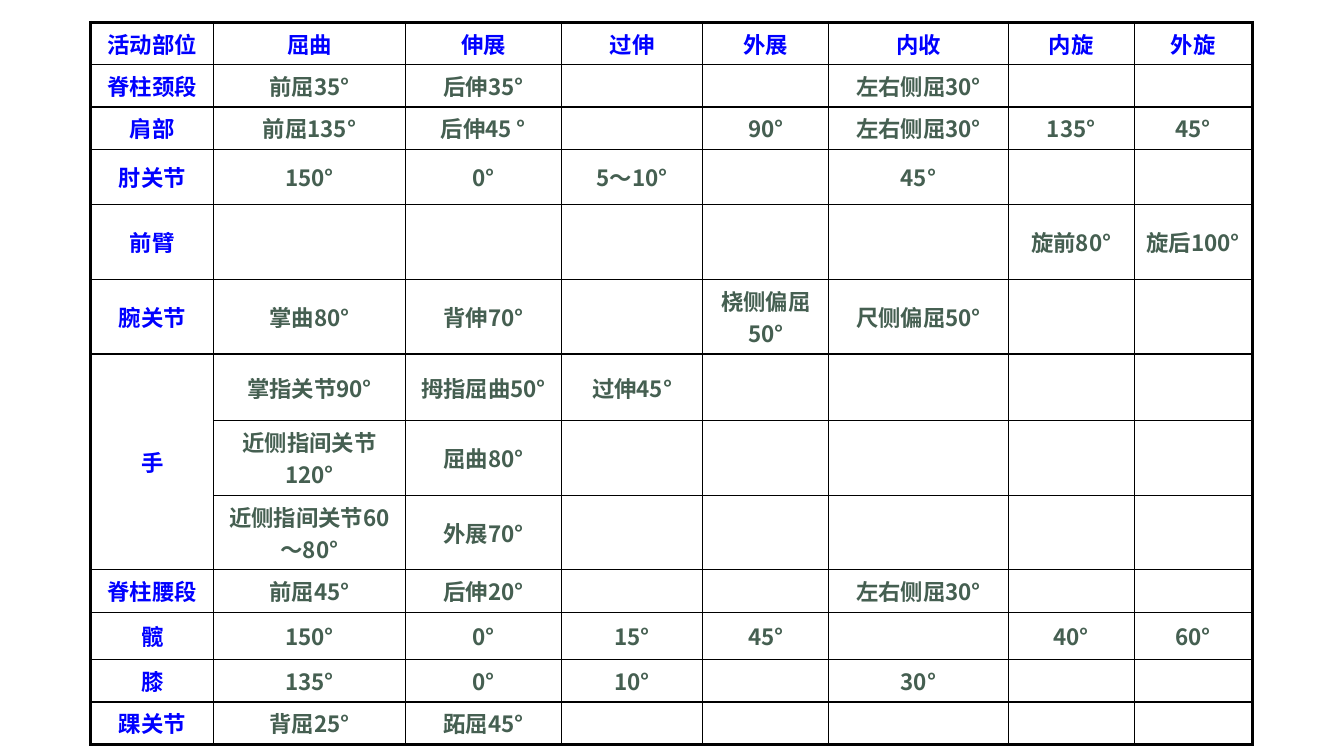
from lxml import etree
from pptx import Presentation
from pptx.dml.color import RGBColor
from pptx.enum import text
from pptx.oxml.ns import qn
from pptx.util import Inches, Pt

BLUE = RGBColor(0x00, 0x00, 0xFF)
GREEN = RGBColor(0x45, 0x5F, 0x51)
BLACK = RGBColor(0x00, 0x00, 0x00)
FONT = "Noto Sans CJK SC"
THIN, THICK = 1, 2.25
BOX = (0.9, 0.22, 11.53, 7.1)
WIDTHS = [1.22, 1.9, 1.55, 1.4, 1.25, 1.78, 1.25, 1.17]
HEIGHTS = [0.42, 0.42, 0.42, 0.55, 0.72, 0.72, 0.66,
           0.72, 0.72, 0.42, 0.47, 0.42, 0.42]
ROWS = [
    ["活动部位", "屈曲", "伸展", "过伸", "外展", "内收", "内旋", "外旋"],
    ["脊柱颈段", "前屈35°", "后伸35°", "", "", "左右侧屈30°", "", ""],
    ["肩部", "前屈135°", "后伸45 °", "", "90°", "左右侧屈30°", "135°", "45°"],
    ["肘关节", "150°", "0°", "5～10°", "", "45°", "", ""],
    ["前臂", "", "", "", "", "", "旋前80°", "旋后100°"],
    ["腕关节", "掌曲80°", "背伸70°", "", "桡侧偏屈50°", "尺侧偏屈50°", "", ""],
    ["手", "掌指关节90°", "拇指屈曲50°", "过伸45°", "", "", "", ""],
    ["", "近侧指间关节120°", "屈曲80°", "", "", "", "", ""],
    ["", "近侧指间关节60～80°", "外展70°", "", "", "", "", ""],
    ["脊柱腰段", "前屈45°", "后伸20°", "", "", "左右侧屈30°", "", ""],
    ["髋", "150°", "0°", "15°", "45°", "", "40°", "60°"],
    ["膝", "135°", "0°", "10°", "", "30°", "", ""],
    ["踝关节", "背屈25°", "跖屈45°", "", "", "", "", ""],
]
HAND, SPAN = 6, 3


def write(cell, words, color):
    """Put centred bold words in a cell."""
    cell.text = words
    para = cell.text_frame.paragraphs[0]
    para.alignment = text.PP_ALIGN.CENTER
    font = para.font
    font.name, font.size, font.bold = FONT, Pt(16), True
    font.color.rgb = color
    props = para._p.pPr.find(qn("a:defRPr"))
    etree.SubElement(props, qn("a:ea"), typeface=FONT)


def border(cell, sides):
    """Draw the four edges of a cell, given widths by side."""
    props = cell._tc.get_or_add_tcPr()
    for i, (side, width) in enumerate(sides.items()):
        line = etree.Element(qn("a:ln" + side), w=str(Pt(width)))
        fill = etree.SubElement(line, qn("a:solidFill"))
        etree.SubElement(fill, qn("a:srgbClr"), val=str(BLACK))
        props.insert(i, line)


def motion(slide, box):
    """Build the table of joint motion ranges in a box."""
    table = slide.shapes.add_table(
        len(ROWS), len(WIDTHS), *map(Inches, box)).table
    table.first_row = table.horz_banding = False
    for col, width in zip(table.columns, WIDTHS):
        col.width = Inches(width)
    for row, height in zip(table.rows, HEIGHTS):
        row.height = Inches(height)
    table.cell(HAND, 0).merge(table.cell(HAND + SPAN - 1, 0))
    end, last = len(ROWS) - 1, len(WIDTHS) - 1
    for r, row in enumerate(ROWS):
        for c, words in enumerate(row):
            cell = table.cell(r, c)
            cell.vertical_anchor = text.MSO_ANCHOR.MIDDLE
            cell.fill.background()
            outer = {"L": c == 0, "R": c == last, "T": r == 0, "B": r == end}
            border(cell, {s: THICK if o else THIN for s, o in outer.items()})
            if words:
                write(cell, words, BLUE if r == 0 or c == 0 else GREEN)


def main():
    """Make the deck and save it."""
    deck = Presentation()
    deck.slide_width, deck.slide_height = Inches(13.33), Inches(7.5)
    motion(deck.slides.add_slide(deck.slide_layouts[6]), BOX)
    deck.save("out.pptx")


if __name__ == "__main__":
    main()
